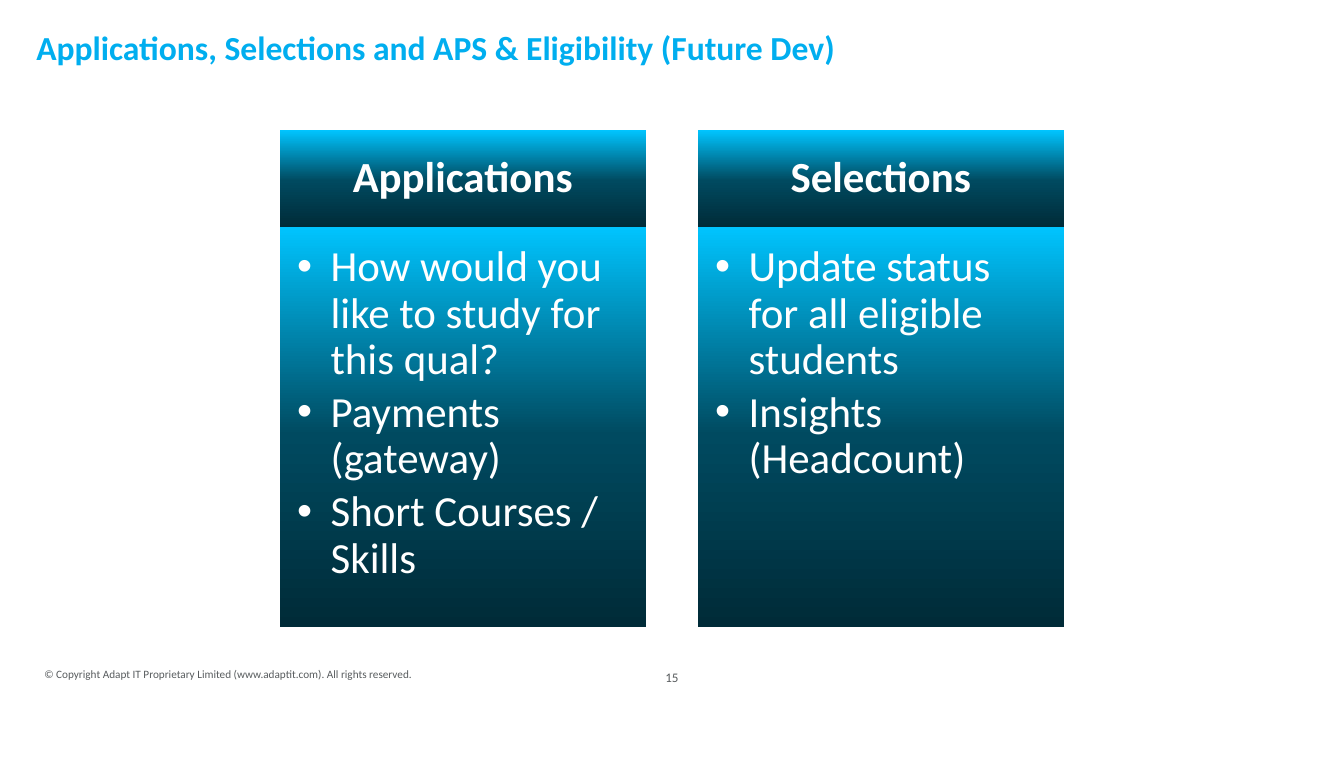
from lxml import etree
from pptx import Presentation
from pptx.dml.color import RGBColor
from pptx.enum.text import MSO_ANCHOR, MSO_AUTO_SIZE, PP_ALIGN
from pptx.oxml.ns import qn
from pptx.util import Inches, Pt

LEFT, CENTER = PP_ALIGN.LEFT, PP_ALIGN.CENTER
TOP, MIDDLE = MSO_ANCHOR.TOP, MSO_ANCHOR.MIDDLE
NO_AUTOFIT = MSO_AUTO_SIZE.NONE

FONT = "Calibri"
TITLE_BLUE = RGBColor(0x00, 0xAE, 0xEF)
WHITE = RGBColor(0xFF, 0xFF, 0xFF)
GRAY = RGBColor(0x58, 0x5C, 0x5E)
GRADIENT = [
    (0, RGBColor(0x00, 0x2B, 0x38)),
    (48, RGBColor(0x00, 0x4A, 0x60)),
    (100, RGBColor(0x00, 0xC4, 0xFE)),
]

TITLE = "Applications, Selections and APS & Eligibility (Future Dev)"
COLUMNS = [
    ("Applications", [
        "How would you like to study for this qual?",
        "Payments (gateway)",
        "Short Courses / Skills",
    ]),
    ("Selections", [
        "Update status for all eligible students",
        "Insights (Headcount)",
    ]),
]
COPYRIGHT = "© Copyright Adapt IT Proprietary Limited (www.adaptit.com). All rights reserved."
PAGE_NUMBER = "15"

COMPARISON_LAYOUT = 4
COLUMN_LEFT, COLUMN_TOP = 2.08, 0.97
COLUMN_WIDTH, COLUMN_GAP = 2.73, 0.38
HEADING_HEIGHT, LIST_HEIGHT = 0.72, 2.97
BULLET_INDENT = 0.25


def place(shape, left, top, width, height):
    shape.left, shape.top = Inches(left), Inches(top)
    shape.width, shape.height = Inches(width), Inches(height)


def add_bullet(paragraph):
    properties = paragraph._p.get_or_add_pPr()
    properties.set("marL", str(Inches(BULLET_INDENT)))
    properties.set("indent", str(-Inches(BULLET_INDENT)))
    etree.SubElement(properties, qn("a:buFont")).set("typeface", "Arial")
    etree.SubElement(properties, qn("a:buChar")).set("char", "•")


def write_text(shape, lines, *, size, color, bold=False, align=LEFT, anchor=MIDDLE,
               insets=(0, 0, 0, 0), line_spacing=1.0, space_after=0, bullets=False):
    frame = shape.text_frame
    frame.word_wrap = True
    frame.auto_size = NO_AUTOFIT
    frame.vertical_anchor = anchor
    (frame.margin_left, frame.margin_top,
     frame.margin_right, frame.margin_bottom) = map(Inches, insets)
    frame.text = "\n".join(lines)
    for paragraph in frame.paragraphs:
        if bullets:
            add_bullet(paragraph)
        paragraph.alignment = align
        paragraph.line_spacing = line_spacing
        paragraph.space_before = Pt(0)
        paragraph.space_after = Pt(space_after)
        font = paragraph.runs[0].font
        font.name, font.size, font.bold = FONT, Pt(size), bold
        font.color.rgb = color


def fill_gradient(shape):
    """Blend upwards from the dark base to the bright top edge."""
    shape.fill.gradient()
    shape.fill.gradient_angle = 90
    stops = shape.fill._xPr.find(qn("a:gradFill")).find(qn("a:gsLst"))
    for stop in list(stops):
        stops.remove(stop)
    for percent, color in GRADIENT:
        stop = etree.SubElement(stops, qn("a:gs"), pos=str(percent * 1000))
        etree.SubElement(stop, qn("a:srgbClr"), val=str(color))


def add_column(slide, index, heading, items):
    left = COLUMN_LEFT + index * (COLUMN_WIDTH + COLUMN_GAP)
    heading_box = slide.placeholders[1 + 2 * index]
    list_box = slide.placeholders[2 + 2 * index]
    place(heading_box, left, COLUMN_TOP, COLUMN_WIDTH, HEADING_HEIGHT)
    place(list_box, left, COLUMN_TOP + HEADING_HEIGHT, COLUMN_WIDTH, LIST_HEIGHT)
    fill_gradient(heading_box)
    fill_gradient(list_box)
    write_text(heading_box, [heading], size=23, color=WHITE, bold=True, align=CENTER,
               insets=(0.18, 0.1, 0.18, 0.1), line_spacing=0.9)
    write_text(list_box, items, size=23, color=WHITE, anchor=TOP, bullets=True,
               insets=(0.13, 0.13, 0.18, 0.2), line_spacing=0.9, space_after=3.5)


def add_footer(slide, text, box, **text_format):
    shape = slide.shapes.add_textbox(*map(Inches, box))
    write_text(shape, [text], color=GRAY, **text_format)


def main():
    presentation = Presentation()
    presentation.slide_width, presentation.slide_height = Inches(10), Inches(5.63)
    slide = presentation.slides.add_slide(presentation.slide_layouts[COMPARISON_LAYOUT])

    place(slide.shapes.title, 0.27, 0.08, 8.93, 0.53)
    write_text(slide.shapes.title, [TITLE], size=18, color=TITLE_BLUE, bold=True,
               line_spacing=Pt(22.6))
    for index, (heading, items) in enumerate(COLUMNS):
        add_column(slide, index, heading, items)
    add_footer(slide, COPYRIGHT, (0.33, 4.78, 3.45, 0.46), size=6)
    add_footer(slide, PAGE_NUMBER, (4.31, 4.78, 1.38, 0.52), size=7, align=CENTER)

    presentation.save("out.pptx")


if __name__ == "__main__":
    main()
